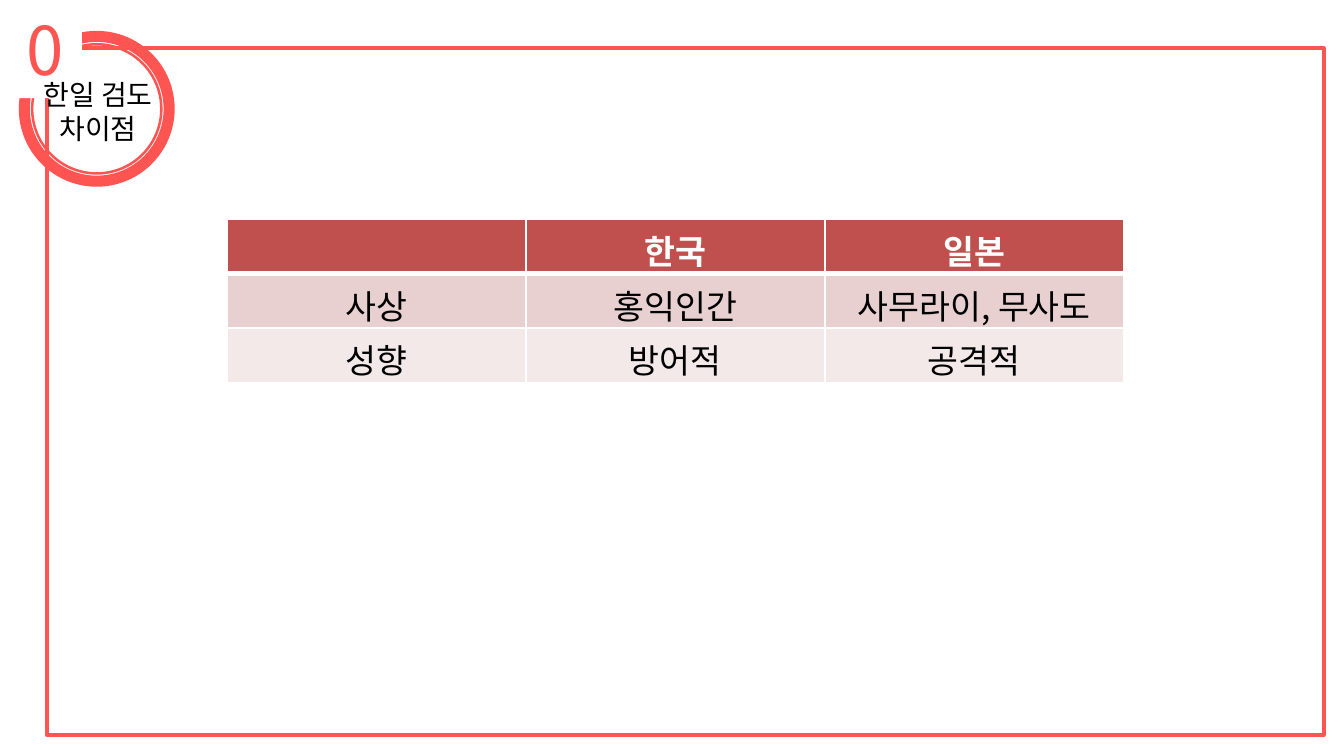
from lxml import etree
from pptx import Presentation
from pptx.dml.color import RGBColor
from pptx.enum.shapes import MSO_SHAPE
from pptx.enum.text import MSO_AUTO_SIZE, PP_ALIGN
from pptx.oxml.ns import qn
from pptx.util import Inches, Pt

CORAL = RGBColor(0xFF, 0x55, 0x52)
WHITE = RGBColor(0xFF, 0xFF, 0xFF)
BLACK = RGBColor(0, 0, 0)
HEADER = RGBColor(0xC0, 0x50, 0x4D)
BANDS = [RGBColor(0xE8, 0xD0, 0xD0), RGBColor(0xF4, 0xE9, 0xE9)]
LATIN, KOREAN = "Arial", "Noto Sans CJK KR"

ROWS = [
    ["", "한국", "일본"],
    ["사상", "홍익인간", "사무라이, 무사도"],
    ["성향", "방어적", "공격적"],
]


def add_filled(s, kind, x, y, w, h, color):
    sp = s.shapes.add_shape(kind, Inches(x), Inches(y), Inches(w), Inches(h))
    sp.shadow.inherit = False
    sp.fill.solid()
    sp.fill.fore_color.rgb = color
    sp.line.fill.background()
    return sp


def add_text(s, x, y, w, h, text, size, font, color, align, wrap):
    tf = s.shapes.add_textbox(Inches(x), Inches(y), Inches(w), Inches(h)).text_frame
    tf.word_wrap = wrap
    tf.auto_size = MSO_AUTO_SIZE.SHAPE_TO_FIT_TEXT
    p = tf.paragraphs[0]
    p.text = text
    p.alignment = align
    p.font.size = Pt(size)
    p.font.name = font
    p.font.color.rgb = color


def add_frame(s, x, y, w, h):
    sp = s.shapes.add_shape(MSO_SHAPE.RECTANGLE, Inches(x), Inches(y), Inches(w), Inches(h))
    sp.shadow.inherit = False
    sp.fill.background()
    sp.line.color.rgb = CORAL
    sp.line.width = Pt(2)


def add_badge(s, x, y, size):
    # Thick outer ring and thin inner ring
    for inset, thickness in [(0, 0.071), (0.09, 0.019)]:
        d = size - 2 * inset
        ring = add_filled(s, MSO_SHAPE.DONUT, x + inset, y + inset, d, d, CORAL)
        ring.adjustments[0] = thickness
    # White corner that opens the rings for the number
    add_filled(s, MSO_SHAPE.RECTANGLE, x - 0.14, y - 0.11, 0.61, 0.61, WHITE)
    # Title and number
    add_text(s, x - 0.04, y + 0.3, 1.26, 0.61, "한일 검도 차이점", 15, LATIN, BLACK,
             PP_ALIGN.CENTER, True)
    add_text(s, x - 0.04, y - 0.22, 0.52, 0.71, "0", 36, KOREAN, CORAL,
             PP_ALIGN.LEFT, False)


def set_borders(cell, top, bottom):
    tcPr = cell._tc.get_or_add_tcPr()
    for side, width in [("L", 1), ("R", 1), ("T", top), ("B", bottom)]:
        ln = etree.SubElement(tcPr, qn(f"a:ln{side}"), w=str(Pt(width)))
        fill = etree.SubElement(ln, qn("a:solidFill"))
        etree.SubElement(fill, qn("a:srgbClr"), val=str(WHITE))


def add_comparison(s, x, y, w, h):
    table = s.shapes.add_table(len(ROWS), len(ROWS[0]), Inches(x), Inches(y),
                               Inches(w), Inches(h)).table
    for i, row in enumerate(ROWS):
        is_header = i == 0
        for j, text in enumerate(row):
            cell = table.cell(i, j)
            # The heavy rule under the header is shared with the first body row
            set_borders(cell, 3 if i == 1 else 1, 3 if is_header else 1)
            cell.fill.solid()
            cell.fill.fore_color.rgb = HEADER if is_header else BANDS[(i - 1) % 2]
            p = cell.text_frame.paragraphs[0]
            p.text = text
            p.alignment = PP_ALIGN.CENTER
            p.font.size = Pt(18)
            p.font.name = LATIN if text == "한국" else KOREAN
            p.font.bold = is_header
            p.font.color.rgb = WHITE if is_header else BLACK


def main():
    prs = Presentation()
    # Widescreen, 16:9
    prs.slide_width = Inches(10)
    prs.slide_height = prs.slide_width * 9 // 16
    s = prs.slides.add_slide(prs.slide_layouts[6])
    add_frame(s, 0.35, 0.36, 9.5, 5.11)
    add_badge(s, 0.14, 0.23, 1.16)
    add_comparison(s, 1.69, 1.63, 6.67, 1.22)
    prs.save("out.pptx")


if __name__ == "__main__":
    main()
